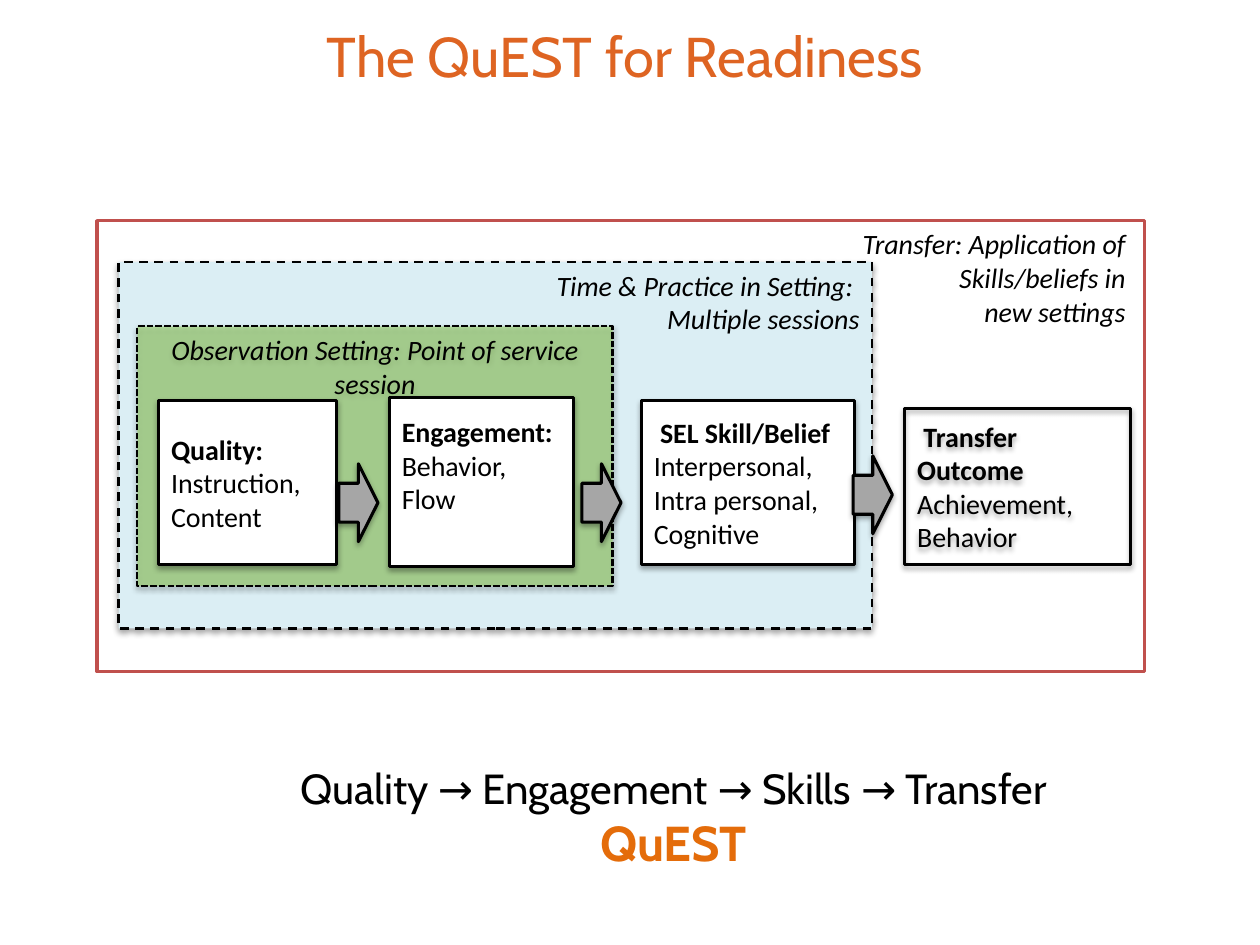
from lxml import etree
from pptx import Presentation
from pptx.dml.color import RGBColor
from pptx.enum.dml import MSO_LINE
from pptx.enum.shapes import MSO_SHAPE
from pptx.enum.text import MSO_ANCHOR, PP_ALIGN
from pptx.oxml.ns import qn
from pptx.util import Cm, Pt

RECTANGLE, RIGHT_ARROW = MSO_SHAPE.RECTANGLE, MSO_SHAPE.RIGHT_ARROW
DASH, SHORT_DASH = MSO_LINE.DASH, MSO_LINE.SQUARE_DOT
LEFT, CENTER, RIGHT = PP_ALIGN.LEFT, PP_ALIGN.CENTER, PP_ALIGN.RIGHT
TOP, MIDDLE = MSO_ANCHOR.TOP, MSO_ANCHOR.MIDDLE
BLACK, WHITE = "000000", "FFFFFF"
BLANK_LAYOUT = 6
LINE_HEIGHT = 0.68  # one 16 pt line, in cm

# text, left, top, width, height in cm; fill, line colour, line width, dash, alignment
SETTINGS = [
    (["Transfer: Application of ", "Skills/beliefs in ", "new settings "],
     (1.96, 4.45, 21.11, 9.09), WHITE, "C0504D", 2, None, RIGHT),
    (["Time & Practice in Setting: ", "Multiple sessions"],
     (2.39, 5.28, 15.19, 7.39), "DBEEF4", BLACK, 1.25, DASH, RIGHT),
    (["Observation Setting: Point of service session"],
     (2.77, 6.58, 9.58, 5.23), "92D050", BLACK, 1.25, SHORT_DASH, CENTER),
]
# heading, details, position, fill, extra space below the text
STAGES = [
    ("Quality:", "Instruction, Content", (3.2, 8.08, 3.58, 3.3), WHITE, 0),
    ("Engagement:", "Behavior, Flow", (7.85, 8.02, 3.71, 3.4), WHITE, LINE_HEIGHT),
    (" SEL Skill/Belief", "Interpersonal, Intra personal, Cognitive",
     (12.93, 8.08, 4.29, 3.3), WHITE, 0),
    (" Transfer Outcome", "Achievement, Behavior", (18.24, 8.23, 4.55, 3.15), None, 0),
]
ARROWS = [(6.83, 9.35), (11.73, 9.35), (17.2, 9.19)]


def color(value):
    return RGBColor.from_string(value)


def format_run(run, size, font_color=BLACK, name="Calibri", bold=False, italic=False):
    font = run.font
    font.size, font.name, font.bold, font.italic = Pt(size), name, bold, italic
    font.color.rgb = color(font_color)


def add_shadow(shape):
    """Cast a soft black shadow straight down."""
    effects = shape._element.spPr.find(qn("a:effectLst"))
    shadow = etree.SubElement(effects, qn("a:outerShdw"), blurRad="40000",
                              dist="23000", dir="5400000", rotWithShape="0")
    black = etree.SubElement(shadow, qn("a:srgbClr"), val=BLACK)
    etree.SubElement(black, qn("a:alpha"), val="35000")


def set_opacity(shape, percent):
    fill_color = shape._element.spPr.find(qn("a:solidFill"))[0]
    etree.SubElement(fill_color, qn("a:alpha"), val=str(percent * 1000))


def add_shape(slide, kind, position, fill, line=BLACK, width=1.75, dash=None, shadow=True):
    shape = slide.shapes.add_shape(kind, *map(Cm, position))
    shape.shadow.inherit = False
    if fill:
        shape.fill.solid()
        shape.fill.fore_color.rgb = color(fill)
    else:
        shape.fill.background()
    shape.line.color.rgb = color(line)
    shape.line.width = Pt(width)
    if dash is not None:
        shape.line.dash_style = dash
    if shadow:
        add_shadow(shape)
    return shape


def write_lines(shape, lines, anchor, alignment):
    frame = shape.text_frame
    frame.word_wrap = True
    frame.vertical_anchor = anchor
    frame.text = "\n".join(lines)
    for paragraph in frame.paragraphs:
        paragraph.alignment = alignment
    return frame.paragraphs


def add_setting(slide, lines, position, fill, line, width, dash, alignment):
    shape = add_shape(slide, RECTANGLE, position, fill, line, width, dash,
                      shadow=dash is not None)
    for paragraph in write_lines(shape, lines, TOP, alignment):
        format_run(paragraph.runs[0], 16, italic=True)
    return shape


def add_stage(slide, heading, details, position, fill, space_below):
    shape = add_shape(slide, RECTANGLE, position, fill)
    shape.text_frame.margin_bottom = Cm(0.13 + space_below)
    paragraphs = write_lines(shape, [heading, details], MIDDLE, LEFT)
    for paragraph, bold in zip(paragraphs, (True, False)):
        format_run(paragraph.runs[0], 16, bold=bold)


def add_text(slide, position, text, anchor, run_formats):
    """Centred text box; each run takes its size, colour and weight in turn."""
    box = slide.shapes.add_textbox(*map(Cm, position))
    paragraph = write_lines(box, [], anchor, CENTER)[0]
    paragraph.text = text
    for run, (size, font_color, bold) in zip(paragraph.runs, run_formats):
        format_run(run, size, font_color, "Cabin", bold)


def main():
    presentation = Presentation()
    presentation.slide_width, presentation.slide_height = Cm(25.4), Cm(19.05)
    slide = presentation.slides.add_slide(presentation.slide_layouts[BLANK_LAYOUT])

    add_text(slide, (0.43, 0.38, 24.33, 1.47), "The QuEST for Readiness", MIDDLE,
             [(32, "DE6422", False)])
    settings = [add_setting(slide, *setting) for setting in SETTINGS]
    set_opacity(settings[-1], 50)
    for stage in STAGES:
        add_stage(slide, *stage)
    for left, top in ARROWS:
        add_shape(slide, RIGHT_ARROW, (left, top, 0.79, 1.57), "A6A6A6")
    add_text(slide, (2.39, 15.24, 22.38, 2.49),
             "Quality → Engagement → Skills → Transfer\vQuEST", TOP,
             [(24, BLACK, False), (28, "E46C0A", True)])

    presentation.save("out.pptx")


if __name__ == "__main__":
    main()
